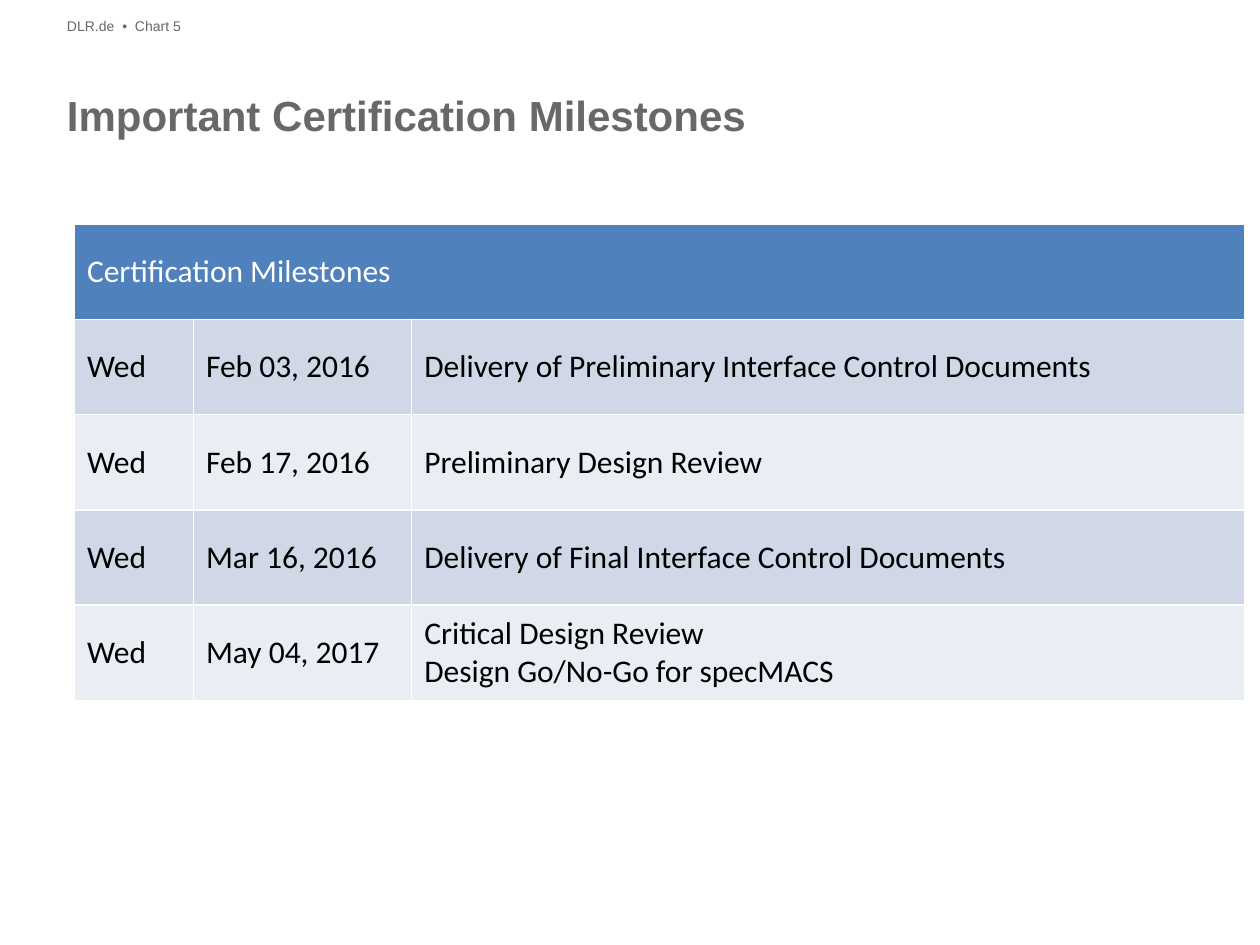
from dataclasses import dataclass

from lxml import etree
from pptx import Presentation, util as u
from pptx.dml.color import RGBColor
from pptx.enum import text
from pptx.oxml import ns
from pptx.slide import Slide

COLOURS = {
    "grey": "686868",
    "white": "FFFFFF",
    "black": "000000",
    "blue": "4F81BD",
    "dark band": "D0D8E8",
    "light band": "E9EDF4",
}

HEADING = "Certification Milestones"
MILESTONES = [
    ("Wed", "Feb 03, 2016", ["Delivery of Preliminary Interface Control Documents"]),
    ("Wed", "Feb 17, 2016", ["Preliminary Design Review"]),
    ("Wed", "Mar 16, 2016", ["Delivery of Final Interface Control Documents"]),
    ("Wed", "May 04, 2017", ["Critical Design Review", "Design Go/No-Go for specMACS"]),
]


@dataclass
class MilestonePage:
    """Holds the style and the slide that the elements are added to."""

    page: Slide
    text_font: str = "Arial"
    table_font: str = "Calibri"
    table_size: int = 18
    row_height: float = 1.92

    def add_lines(self, frame, lines, font, size, colour, bold=False):
        for index, line in enumerate(lines):
            para = frame.add_paragraph() if index else frame.paragraphs[0]
            span = para.add_run()
            span.text = line
            span.font.name = font
            span.font.size = u.Pt(size)
            span.font.bold = bold
            span.font.color.rgb = RGBColor.from_string(COLOURS[colour])

    def label(self, words, left, top, width, height, size, bold=False, wrap=True):
        box = self.page.shapes.add_textbox(*map(u.Cm, (left, top, width, height)))
        frame = box.text_frame
        frame.word_wrap = wrap
        frame.margin_left = frame.margin_top = 0
        frame.margin_right = frame.margin_bottom = 0
        self.add_lines(frame, [words], self.text_font, size, "grey", bold)

    def border(self, cell, width):
        properties = cell._tc.get_or_add_tcPr()
        for side in ("lnL", "lnR", "lnT", "lnB"):
            line = etree.SubElement(properties, ns.qn(f"a:{side}"), w=str(u.Pt(width)))
            fill = etree.SubElement(line, ns.qn("a:solidFill"))
            etree.SubElement(fill, ns.qn("a:srgbClr"), val=COLOURS["white"])

    def cell(self, cell, lines, fill, colour="black"):
        self.border(cell, 1)
        cell.fill.solid()
        cell.fill.fore_color.rgb = RGBColor.from_string(COLOURS[fill])
        cell.vertical_anchor = text.MSO_ANCHOR.MIDDLE
        self.add_lines(cell.text_frame, lines, self.table_font, self.table_size, colour)

    def table(self, heading, milestones, left, top, widths):
        count = len(milestones) + 1
        table = self.page.shapes.add_table(
            count, len(widths), u.Cm(left), u.Cm(top),
            u.Cm(sum(widths)), u.Cm(self.row_height * count),
        ).table
        for column, width in zip(table.columns, widths):
            column.width = u.Cm(width)
        for row in table.rows:
            row.height = u.Cm(self.row_height)
        table.cell(0, 0).merge(table.cell(0, len(widths) - 1))
        self.cell(table.cell(0, 0), [heading], "blue", "white")
        for row, (day, date, events) in enumerate(milestones, start=1):
            band = "dark band" if row % 2 else "light band"
            for column, lines in enumerate(([day], [date], events)):
                self.cell(table.cell(row, column), lines, band)


def main():
    deck = Presentation()
    deck.slide_width, deck.slide_height = u.Cm(25.4), u.Cm(19.05)
    milestones = MilestonePage(deck.slides.add_slide(deck.slide_layouts[6]))
    milestones.label("DLR.de  •  Chart 5", 1.35, 0.36, 2.9, 0.41, 8, wrap=False)
    milestones.label(
        "Important Certification Milestones", 1.35, 1.8, 22.7, 2.06, 24, bold=True
    )
    milestones.table(HEADING, MILESTONES, 1.5, 4.52, (2.4, 4.4, 16.8))
    deck.save("out.pptx")


if __name__ == "__main__":
    main()
